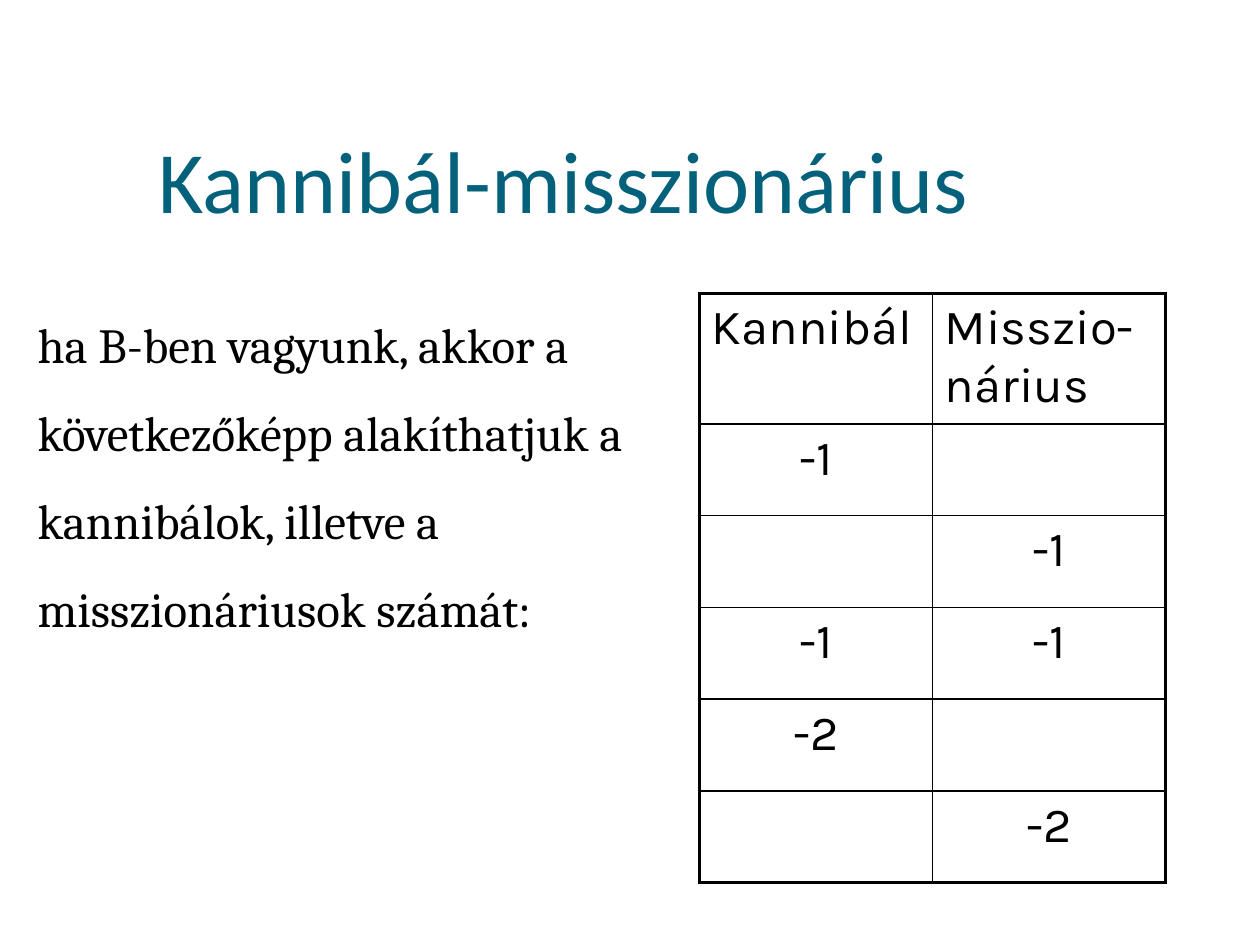
from typing import NamedTuple

from lxml import etree
from pptx import Presentation
from pptx.dml.color import RGBColor
from pptx.enum import text
from pptx.oxml import ns
from pptx.util import Pt

INK = "000000"
TEAL = "04617B"
THIN, THICK = 1, 2.25
HEADER_H, ROW_H, COL_W = 74.16, 52.42, 133.2


class Box(NamedTuple):
    left: float
    top: float
    width: float
    height: float

    def lengths(self) -> list:
        return [Pt(v) for v in self]


ROWS = [
    ("Kannibál", "Misszio-nárius"),
    ("-1", ""),
    ("", "-1"),
    ("-1", "-1"),
    ("-2", ""),
    ("", "-2"),
]


def color(value: str) -> RGBColor:
    return RGBColor.from_string(value)


def write(tf, words: str, *, font: str, size: float = 28, ink: str = INK,
          align=text.PP_ALIGN.LEFT, before: float = 0, spacing: float = 1.0) -> None:
    p = tf.paragraphs[0]
    p.alignment = align
    p.space_before = Pt(before)
    p.line_spacing = spacing
    r = p.add_run()
    r.text = words
    r.font.name = font
    r.font.size = Pt(size)
    r.font.color.rgb = color(ink)


def add_text(s, box: Box, words: str, *, anchor=text.MSO_ANCHOR.TOP,
             insets=(7.2, 3.6, 7.2, 3.6), **style) -> None:
    tf = s.shapes.add_textbox(*box.lengths()).text_frame
    tf.word_wrap = True
    tf.vertical_anchor = anchor
    tf.margin_left, tf.margin_top, tf.margin_right, tf.margin_bottom = map(Pt, insets)
    write(tf, words, **style)


def set_borders(cell, widths: dict[str, float]) -> None:
    """Put solid borders before the cell's fill, as the schema requires."""
    props = cell._tc.get_or_add_tcPr()
    for i, (side, width) in enumerate(widths.items()):
        ln = etree.Element(ns.qn(f"a:ln{side}"), w=str(Pt(width)))
        fill = etree.SubElement(ln, ns.qn("a:solidFill"))
        etree.SubElement(fill, ns.qn("a:srgbClr"), val=INK)
        props.insert(i, ln)


def add_moves_table(s, left: float, top: float) -> None:
    n_rows, n_cols = len(ROWS), len(ROWS[0])
    box = Box(left, top, COL_W * n_cols, HEADER_H + ROW_H * (n_rows - 1))
    table = s.shapes.add_table(n_rows, n_cols, *box.lengths()).table
    table.first_row = table.horz_banding = False
    for col in table.columns:
        col.width = Pt(COL_W)
    for i, values in enumerate(ROWS):
        table.rows[i].height = Pt(ROW_H if i else HEADER_H)
        for j, value in enumerate(values):
            cell = table.cell(i, j)
            cell.fill.background()
            outer = {"L": j == 0, "R": j == n_cols - 1, "T": i == 0, "B": i == n_rows - 1}
            set_borders(cell, {k: THICK if edge else THIN for k, edge in outer.items()})
            if value:
                align = text.PP_ALIGN.CENTER if i else text.PP_ALIGN.LEFT
                write(cell.text_frame, value, font="Karla", align=align, before=5.6)


def main() -> None:
    prs = Presentation()
    prs.slide_width, prs.slide_height = Pt(720), Pt(540)
    s = prs.slides.add_slide(prs.slide_layouts[6])
    add_text(s, Box(90.72, 16.56, 613.44, 115.2), "Kannibál-misszionárius",
             font="Calibri", size=50, ink=TEAL,
             anchor=text.MSO_ANCHOR.BOTTOM, insets=(0, 3.6, 0, 0))
    add_text(s, Box(14.4, 159.12, 379.44, 324),
             "ha B-ben vagyunk, akkor a következőképp alakíthatjuk a kannibálok, "
             "illetve a misszionáriusok számát:",
             font="Cambria", before=5.6, spacing=1.5)
    add_moves_table(s, 399.6, 167.76)
    prs.save("out.pptx")


if __name__ == "__main__":
    main()
